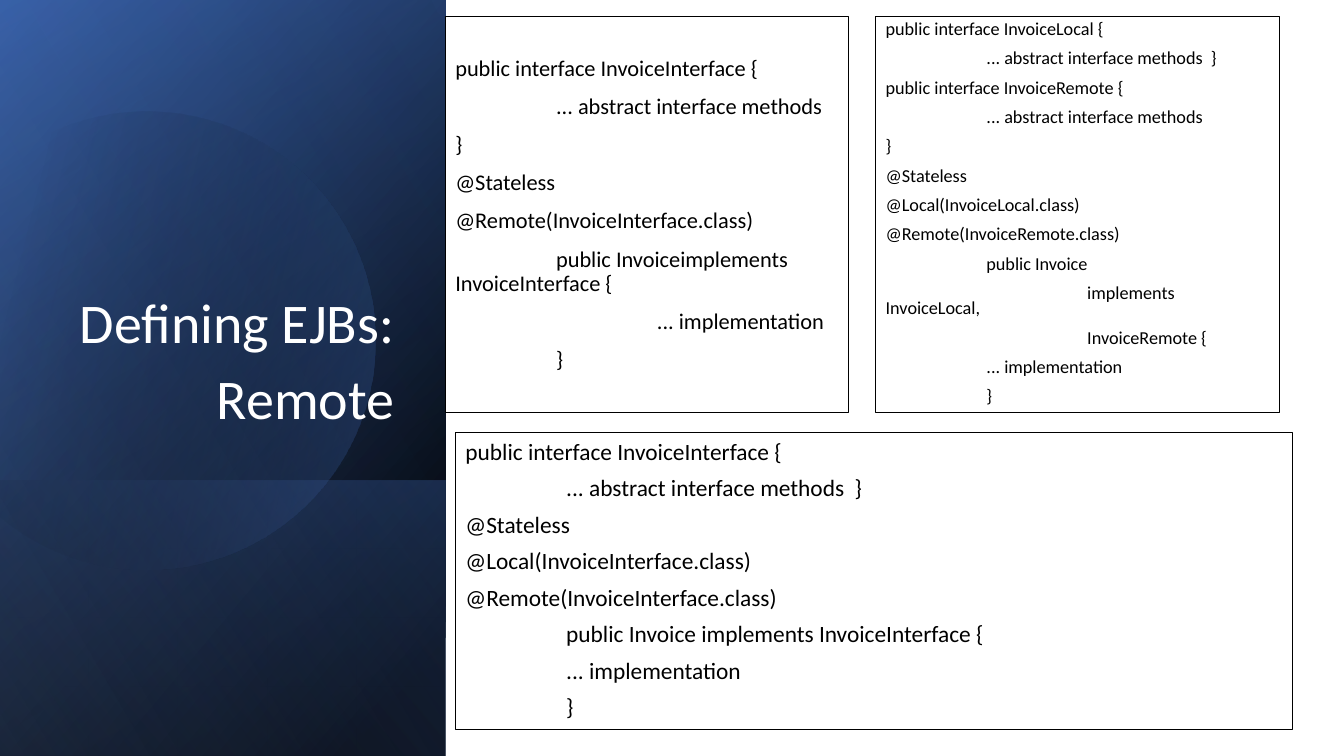
from lxml.etree import SubElement
from pptx import Presentation
from pptx.dml.color import RGBColor
from pptx.enum.shapes import MSO_SHAPE as SHAPE
from pptx.enum.text import MSO_ANCHOR as ANCHOR, MSO_AUTO_SIZE as AUTO, PP_ALIGN as ALIGN
from pptx.oxml.ns import qn
from pptx.util import Cm, Pt

BLACK = RGBColor(0x00, 0x00, 0x00)
WHITE = RGBColor(0xFF, 0xFF, 0xFF)
BLUE = RGBColor(0x44, 0x72, 0xC4)
DEEP_BLUE = RGBColor(0x2F, 0x55, 0x97)
PALE_BLUE = RGBColor(0x8F, 0xAA, 0xDC)

# Content
TITLE = ["Defining EJBs:", "Remote"]
REMOTE_CODE = [
    "public interface InvoiceInterface {",
    "\t... abstract interface methods",
    "}",
    "@Stateless",
    "@Remote(InvoiceInterface.class)",
    "\tpublic Invoiceimplements InvoiceInterface {",
    "\t\t... implementation",
    "\t}",
]
TWO_INTERFACES_CODE = [
    "public interface InvoiceLocal {",
    "\t... abstract interface methods  }",
    "public interface InvoiceRemote {",
    "\t... abstract interface methods",
    "}",
    "@Stateless",
    "@Local(InvoiceLocal.class)",
    "@Remote(InvoiceRemote.class)",
    "\tpublic Invoice",
    "\t\timplements InvoiceLocal,",
    "\t\tInvoiceRemote {",
    "\t... implementation",
    "\t}",
]
SHARED_INTERFACE_CODE = [
    "public interface InvoiceInterface {",
    "\t... abstract interface methods  }",
    "@Stateless",
    "@Local(InvoiceInterface.class)",
    "@Remote(InvoiceInterface.class)",
    "\tpublic Invoice implements InvoiceInterface {",
    "\t... implementation",
    "\t}",
]

# Side panel, in cm; a gradient is (angle, two stops of position, colour, opacity)
PANEL_W, PANEL_H, LOWER_H = 11.23, 19.05, 6.95
LAYERS_BELOW = [
    (PANEL_H, (50, [(8, BLACK, 100), (100, DEEP_BLUE, 100)])),
    (PANEL_H, (30, [(0, BLACK, 0), (99, BLUE, 46)])),
    (LOWER_H, (130, [(2, BLUE, 29), (100, BLACK, 30)])),
]
CIRCLE_GRADIENT = (30, [(29, BLACK, 0), (100, BLUE, 43)])
LAYERS_ABOVE = [(PANEL_H, (120, [(0, BLACK, 0), (99, PALE_BLUE, 11)]))]
CIRCLE_X, CIRCLE_Y, CIRCLE_R, CIRCLE_TURN = 3.7, 8.58, 5.77, -16.1
CUT_ANGLES = (230, 130)  # where the circle meets the slide's left edge
TAB = Cm(2.54)

prs = Presentation()
prs.slide_width, prs.slide_height = Cm(33.87), Cm(19.05)
slide = prs.slides.add_slide(prs.slide_layouts[0])
title, subtitle = slide.placeholders


def place(sp, left, top, width, height):
    sp.left, sp.top, sp.width, sp.height = Cm(left), Cm(top), Cm(width), Cm(height)


def paint(sp, gradient):
    """Fill a panel part with a gradient and put it behind the text."""
    angle, stops = gradient
    sp.shadow.inherit = False
    sp.line.fill.background()
    sp.fill.gradient()
    sp.fill.gradient_angle = 360 - angle
    for stop, (position, color, _) in zip(sp.fill.gradient_stops, stops):
        stop.position = position / 100
        stop.color.rgb = color
    for clr, (_, _, opacity) in zip(sp._element.spPr.iter(qn("a:srgbClr")), stops):
        SubElement(clr, qn("a:alpha")).set("val", str(opacity * 1000))
    title._element.addprevious(sp._element)


def add_layers(layers):
    """Stack bottom-aligned layers, each turned a quarter and mirrored."""
    for height, gradient in layers:
        sp = slide.shapes.add_shape(SHAPE.RECTANGLE, 0, 0, 0, 0)
        middle = PANEL_H - height / 2
        place(sp, (PANEL_W - height) / 2, middle - PANEL_W / 2, height, PANEL_W)
        sp.rotation = 90
        sp._element.spPr.find(qn("a:xfrm")).set("flipH", "1")
        paint(sp, gradient)


def write(sp, lines, anchor, size, color, **paragraph_format):
    tf = sp.text_frame
    for name, value in dict(word_wrap=True, auto_size=AUTO.NONE,
                            vertical_anchor=anchor).items():
        setattr(tf, name, value)
    for i, line in enumerate(lines):
        p = tf.paragraphs[0] if i == 0 else tf.add_paragraph()
        for name, value in paragraph_format.items():
            setattr(p, name, value)
        p._p.get_or_add_pPr().set("defTabSz", str(int(TAB)))
        r = p.add_run()
        r.text = line
        r.font.name, r.font.size, r.font.color.rgb = "Calibri", Pt(size), color


# Side panel with a circle cut off at the slide's edge
add_layers(LAYERS_BELOW)
circle = slide.shapes.add_shape(SHAPE.CHORD, 0, 0, 0, 0)
place(circle, CIRCLE_X - CIRCLE_R, CIRCLE_Y - CIRCLE_R, 2 * CIRCLE_R, 2 * CIRCLE_R)
circle.rotation = CIRCLE_TURN
for i, angle in enumerate(CUT_ANGLES):
    circle.adjustments[i] = (angle - CIRCLE_TURN) * 0.6
paint(circle, CIRCLE_GRADIENT)
add_layers(LAYERS_ABOVE)

# Title
place(title, 1.3, 1.61, 8.89, 9.4)
write(title, TITLE, ANCHOR.BOTTOM, 40, WHITE,
      alignment=ALIGN.RIGHT, line_spacing=0.9, space_before=Pt(11))

# Code boxes: shape, position, lines, text size, line spacing
two_interfaces, shared_interface = (
    slide.shapes.add_shape(SHAPE.RECTANGLE, 0, 0, 0, 0) for _ in range(2))
two_interfaces.shadow.inherit = shared_interface.shadow.inherit = False
for sp, box, lines, size, spacing in [
    (subtitle, (11.22, 0.42, 10.16, 9.98), REMOTE_CODE, 16, 0.9),
    (two_interfaces, (22.07, 0.42, 10.17, 9.98), TWO_INTERFACES_CODE, 13, 0.7),
    (shared_interface, (11.48, 10.9, 21.09, 7.49), SHARED_INTERFACE_CODE, 16.7, 0.8),
]:
    place(sp, *box)
    sp.fill.background()
    sp.line.color.rgb, sp.line.width = BLACK, Pt(0.75)
    write(sp, lines, ANCHOR.MIDDLE, size, BLACK,
          alignment=ALIGN.LEFT, line_spacing=spacing, space_before=Pt(10))

prs.save("out.pptx")
